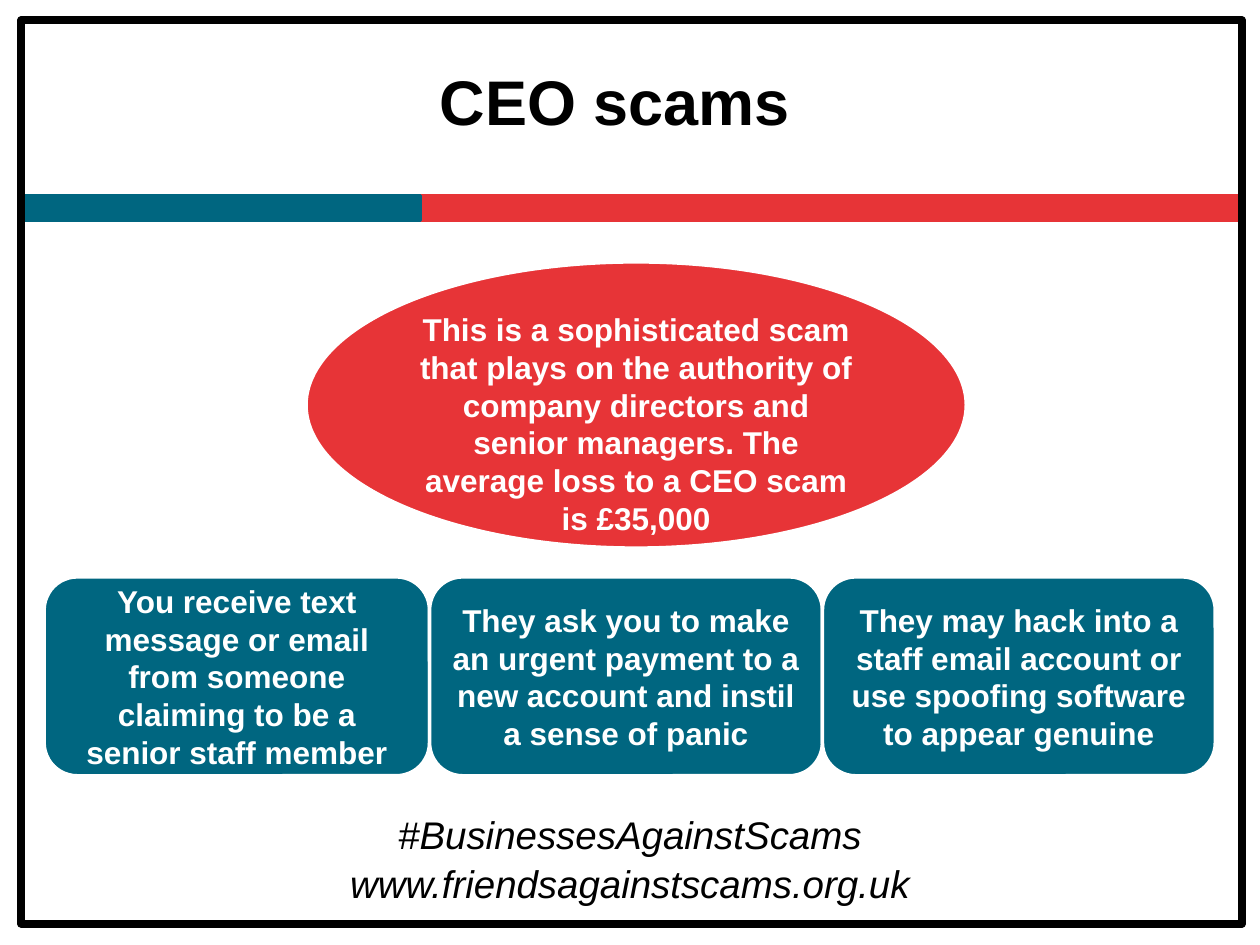
import dataclasses

import pptx
import pptx.dml.color
import pptx.enum.shapes
import pptx.enum.text
import pptx.util

Cm = pptx.util.Cm
Pt = pptx.util.Pt
Shape = pptx.enum.shapes.MSO_SHAPE
Anchor = pptx.enum.text.MSO_ANCHOR


@dataclasses.dataclass(frozen=True)
class Theme:
    font: str = "Arial"
    black: str = "000000"
    white: str = "FFFFFF"
    red: str = "E73437"
    teal: str = "006680"
    title_size: float = 36
    body_size: float = 18
    footer_size: float = 22
    edge: float = 2
    frame_edge: float = 4.5


THEME = Theme()
SLIDE_WIDTH, SLIDE_HEIGHT = 25.4, 19.05
CARDS = (
    (7.77, "You receive text message or email from someone claiming to be a senior staff member"),
    (7.92, "They ask you to make an urgent payment to a new account and instil a sense of panic"),
    (7.92, "They may hack into a staff email account or use spoofing software to appear genuine"),
)
FOOTERS = ("#BusinessesAgainstScams", "www.friendsagainstscams.org.uk")


def rgb(value):
    return pptx.dml.color.RGBColor.from_string(value)


def write_text(box, text, size, color, bold=False, italic=False, anchor=Anchor.MIDDLE):
    frame = box.text_frame
    frame.word_wrap = True
    frame.vertical_anchor = anchor
    para = frame.paragraphs[0]
    para.alignment = pptx.enum.text.PP_ALIGN.CENTER
    span = para.add_run()
    span.text = text
    span.font.name = THEME.font
    span.font.size = Pt(size)
    span.font.bold = bold
    span.font.italic = italic
    span.font.color.rgb = rgb(color)


def add_panel(page, kind, area, fill, line, width=THEME.edge):
    panel = page.shapes.add_shape(kind, *map(Cm, area))
    panel.shadow.inherit = False
    if fill:
        panel.fill.solid()
        panel.fill.fore_color.rgb = rgb(fill)
    else:
        panel.fill.background()
    panel.line.color.rgb = rgb(line)
    panel.line.width = Pt(width)
    return panel


def add_text(page, area, text, **style):
    box = page.shapes.add_textbox(*map(Cm, area))
    write_text(box, text, color=THEME.black, **style)


def add_message(page, kind, area, text, fill, anchor=Anchor.MIDDLE):
    panel = add_panel(page, kind, area, fill, THEME.white)
    write_text(panel, text, THEME.body_size, THEME.white, bold=True, anchor=anchor)


def add_cards(page, left, top, height):
    for width, text in CARDS:
        add_message(page, Shape.ROUNDED_RECTANGLE, (left, top, width, height), text, THEME.teal)
        left += width


def main():
    deck = pptx.Presentation()
    deck.slide_width, deck.slide_height = Cm(SLIDE_WIDTH), Cm(SLIDE_HEIGHT)
    page = deck.slides.add_slide(deck.slide_layouts[6])

    add_panel(page, Shape.RECTANGLE, (1.07, 3.94, 23.98, 0.51), THEME.red, THEME.red)
    add_panel(page, Shape.RECTANGLE, (0.43, 3.94, 8.05, 0.51), THEME.teal, THEME.teal)
    add_panel(page, Shape.RECTANGLE, (0.43, 0.41, 24.61, 18.21), None, THEME.black, THEME.frame_edge)
    for row, text in enumerate(FOOTERS):
        add_text(page, (0, 16.23 + row * 0.99, SLIDE_WIDTH, 1.19), text,
                 size=THEME.footer_size, italic=True, anchor=Anchor.TOP)

    add_text(page, (0.43, 0.43, 23.93, 3.18), "CEO scams", size=THEME.title_size, bold=True)
    add_message(
        page, Shape.OVAL, (6.17, 5.28, 13.31, 5.77),
        "This is a sophisticated scam that plays on the authority of company directors "
        "and senior managers. The average loss to a CEO scam is £35,000",
        THEME.red, anchor=Anchor.TOP)
    add_cards(page, left=0.89, top=11.63, height=4.01)
    deck.save("out.pptx")


if __name__ == "__main__":
    main()
